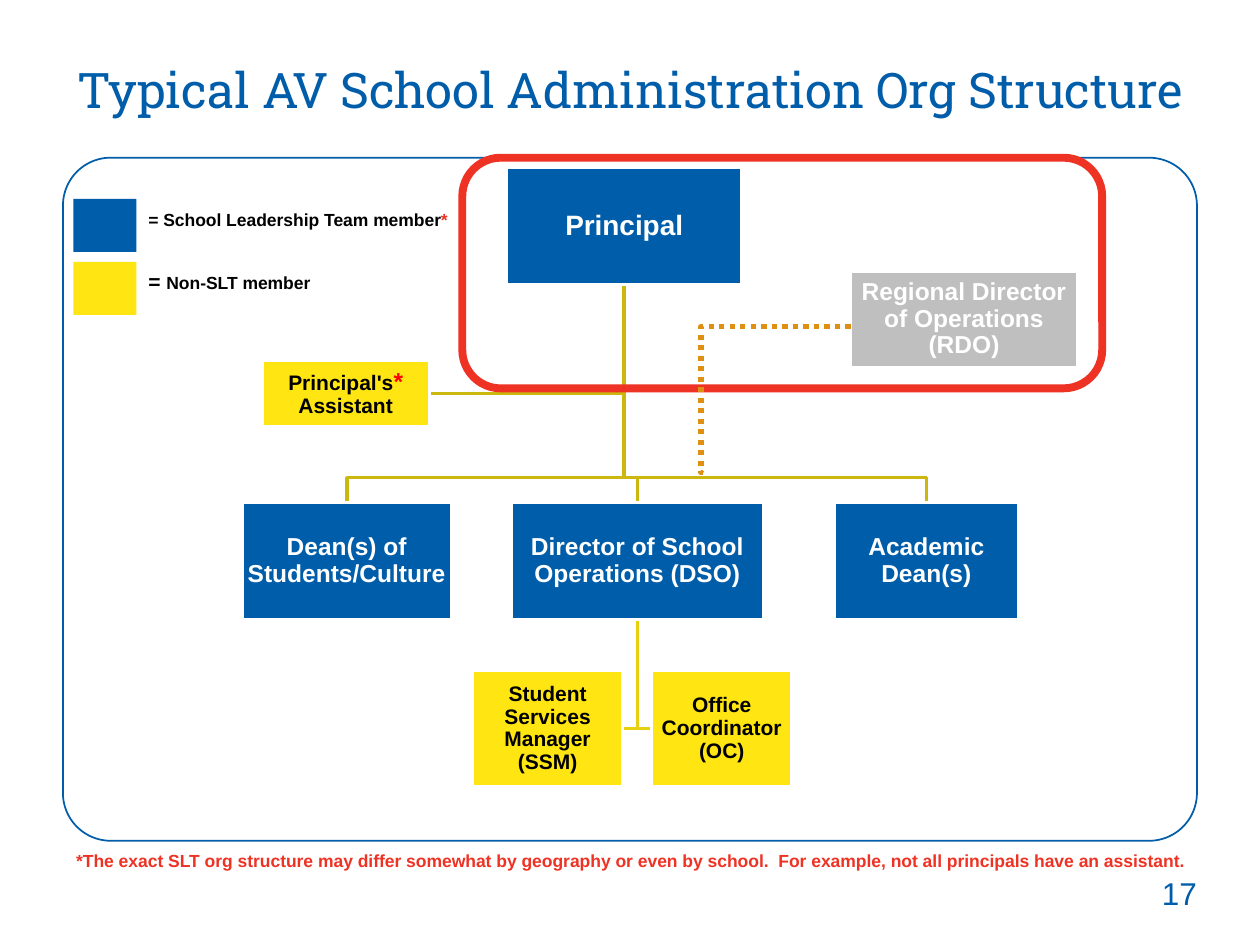
from dataclasses import dataclass

from lxml import etree
from pptx import Presentation
from pptx.dml.color import RGBColor
from pptx.enum.dml import MSO_LINE
from pptx.enum.shapes import MSO_CONNECTOR, MSO_SHAPE
from pptx.enum.text import MSO_ANCHOR, PP_ALIGN
from pptx.oxml.ns import qn
from pptx.util import Cm, Pt

BLUE = RGBColor(0x00, 0x5D, 0xAA)
YELLOW = RGBColor(0xFF, 0xE5, 0x12)
GRAY = RGBColor(0xBF, 0xBF, 0xBF)
RED = RGBColor(0xEE, 0x32, 0x24)
PURE_RED = RGBColor(0xFF, 0x00, 0x00)
WHITE = RGBColor(0xFF, 0xFF, 0xFF)
BLACK = RGBColor(0x00, 0x00, 0x00)
GOLD = RGBColor(0xCC, 0xB7, 0x0E)
LIGHT_GOLD = RGBColor(0xE7, 0xD0, 0x10)
ORANGE = RGBColor(0xDF, 0x8F, 0x11)


@dataclass(frozen=True)
class Run:
    text: str
    size: float
    color: RGBColor


@dataclass(frozen=True)
class Box:
    """A position in the org chart; lengths in cm."""
    left: float
    top: float
    width: float
    height: float
    fill: RGBColor
    runs: tuple[Run, ...]

    @property
    def right(self) -> float:
        return self.left + self.width

    @property
    def bottom(self) -> float:
        return self.top + self.height

    @property
    def center(self) -> float:
        return self.left + self.width / 2

    @property
    def middle(self) -> float:
        return self.top + self.height / 2


def write(tf, runs, align=PP_ALIGN.LEFT, bold=True, font="Arial"):
    tf.word_wrap = True
    p = tf.paragraphs[0]
    p.alignment = align
    p.font.name, p.font.bold = font, bold
    for run in runs:
        r = p.add_run()
        r.text = run.text
        r.font.size = Pt(run.size)
        r.font.color.rgb = run.color
    return p


def add_text(s, left, top, width, height, runs, **style):
    tf = s.shapes.add_textbox(Cm(left), Cm(top), Cm(width), Cm(height)).text_frame
    write(tf, runs, **style)
    return tf


def add_block(s, kind, left, top, width, height, fill=None, line=None, weight=1.0):
    sp = s.shapes.add_shape(kind, Cm(left), Cm(top), Cm(width), Cm(height))
    sp.shadow.inherit = False
    if fill is None:
        sp.fill.background()
    else:
        sp.fill.solid()
        sp.fill.fore_color.rgb = fill
    if line is None:
        sp.line.fill.background()
    else:
        sp.line.color.rgb = line
        sp.line.width = Pt(weight)
    return sp


def draw_box(s, box: Box) -> None:
    sp = add_block(s, MSO_SHAPE.RECTANGLE, box.left, box.top, box.width, box.height,
                   box.fill, WHITE, 2)
    tf = sp.text_frame
    tf.margin_left = tf.margin_right = tf.margin_top = tf.margin_bottom = Cm(0.03)
    tf.vertical_anchor = MSO_ANCHOR.MIDDLE
    write(tf, box.runs, PP_ALIGN.CENTER).line_spacing = 0.9


def draw_branch(s, points: list[tuple[float, float]], color: RGBColor) -> None:
    start, *rest = [(Cm(x), Cm(y)) for x, y in points]
    builder = s.shapes.build_freeform(*start)
    builder.add_line_segments(rest, close=False)
    sp = builder.convert_to_shape()
    sp.shadow.inherit = False
    sp.fill.background()
    sp.line.color.rgb = color
    sp.line.width = Pt(2)


def branch_down(s, parent: Box, child: Box, color: RGBColor) -> None:
    bus = child.top - 0.5
    draw_branch(s, [(parent.center, parent.bottom), (parent.center, bus),
                    (child.center, bus), (child.center, child.top)], color)


def branch_side(s, parent: Box, child: Box, color: RGBColor) -> None:
    edge = child.right if child.center < parent.center else child.left
    draw_branch(s, [(parent.center, parent.bottom), (parent.center, child.middle),
                    (edge, child.middle)], color)


ROW, HEIGHT = 10.13, 2.36
STAFF_ROW = 13.51
principal = Box(10.21, 3.38, 4.75, HEIGHT, BLUE, (Run("Principal", 16, WHITE),))
culture = Box(4.88, ROW, 4.22, HEIGHT, BLUE,
              (Run("Dean(s) of Students/Culture", 14, WHITE),))
dso = Box(10.31, ROW, 5.08, HEIGHT, BLUE,
          (Run("Director of School Operations (DSO)", 14, WHITE),))
academic = Box(16.81, ROW, 3.73, HEIGHT, BLUE, (Run("Academic Dean(s)", 14, WHITE),))
ssm = Box(9.53, STAFF_ROW, 3.02, HEIGHT, YELLOW,
          (Run("Student Services Manager (SSM)", 12, BLACK),))
coordinator = Box(13.13, STAFF_ROW, 2.84, HEIGHT, YELLOW,
                  (Run("Office Coordinator (OC)", 12, BLACK),))
assistant = Box(5.28, 7.26, 3.38, 1.35, YELLOW,
                (Run("Principal's", 12, BLACK), Run("*", 14, PURE_RED),
                 Run(" Assistant", 12, BLACK)))
rdo = Box(17.15, 5.46, 4.57, 1.96, GRAY,
          (Run("Regional Director of Operations (RDO)", 14, WHITE),))

prs = Presentation()
prs.slide_width, prs.slide_height = Cm(25.4), Cm(19.05)
s = prs.slides.add_slide(prs.slide_layouts[6])

# Frame, title and page number
frame = add_block(s, MSO_SHAPE.ROUNDED_RECTANGLE, 1.27, 3.18, 22.86, 13.77, line=BLUE)
frame.adjustments[0] = 0.07
title = add_text(s, 0, 1.07, 25.4, 1.7,
                 [Run("Typical AV School Administration Org Structure", 28, BLUE)],
                 align=PP_ALIGN.CENTER, bold=False, font="Roboto Slab")
title.margin_left = title.margin_right = 0
number = add_text(s, 18.21, 17.35, 5.92, 1.32, [Run("17", 18, BLUE)],
                  align=PP_ALIGN.RIGHT, bold=False)
number.margin_right = 0
number.vertical_anchor = MSO_ANCHOR.MIDDLE

# Org chart: branches first, boxes on top
branch_side(s, principal, assistant, GOLD)
for child in (academic, dso, culture):
    branch_down(s, principal, child, GOLD)
for child in (coordinator, ssm):
    branch_side(s, dso, child, LIGHT_GOLD)
for box in (principal, culture, dso, ssm, coordinator, academic, assistant, rdo):
    draw_box(s, box)

# Footnote
add_text(s, 0, 17.02, 25.4, 0.69,
         [Run("*The exact SLT org structure may differ somewhat by geography or even by "
              "school.  For example, not all principals have an assistant.", 10, RED)],
         align=PP_ALIGN.CENTER)

# Highlight and dotted reporting line
add_block(s, MSO_SHAPE.ROUNDED_RECTANGLE, 9.32, 3.18, 12.9, 4.65, line=RED, weight=4.5)
dotted = s.shapes.add_connector(MSO_CONNECTOR.ELBOW, Cm(rdo.left), Cm(6.58),
                                Cm(14.17), Cm(9.53))
dotted.line.color.rgb = ORANGE
dotted.line.width = Pt(3)
dotted.line.dash_style = MSO_LINE.ROUND_DOT
sp_pr = dotted._element.spPr
etree.SubElement(sp_pr, qn("a:effectLst"))
guides = sp_pr.find(qn("a:prstGeom")).find(qn("a:avLst"))
etree.SubElement(guides, qn("a:gd"), name="adj1", fmla="val 101200")

# Legend
for top, color in ((4.01, BLUE), (5.28, YELLOW)):
    add_block(s, MSO_SHAPE.RECTANGLE, 1.48, top, 1.27, 1.07, color)
add_text(s, 2.74, 4.09, 7.42, 0.69,
         [Run("= School Leadership Team member", 10, BLACK), Run("*", 10, RED)])
add_text(s, 2.74, 5.28, 4.65, 0.76,
         [Run("= ", 12, BLACK), Run("Non-SLT member", 10, BLACK)])

prs.save("out.pptx")
